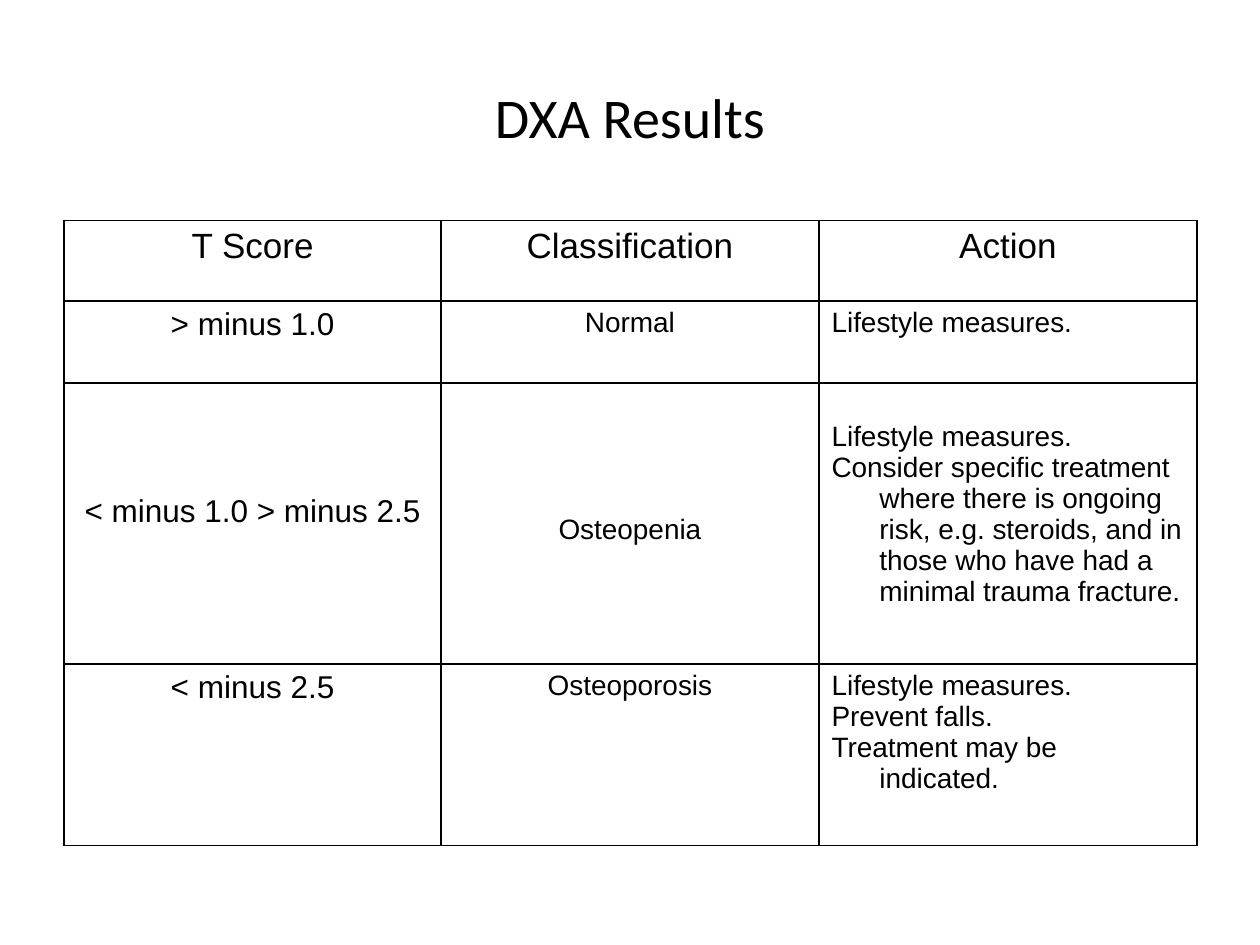
from lxml import etree
from pptx import Presentation
from pptx.dml.color import RGBColor
from pptx.enum.text import MSO_ANCHOR, PP_ALIGN as ALIGN
from pptx.oxml.ns import qn
from pptx.util import Inches, Pt

BLACK = RGBColor(0x00, 0x00, 0x00)
HANGING = 0.38
MARGIN = 0.05

COLUMNS = [2.99, 3, 3]
ROWS = [0.64, 0.65, 2.23, 1.44]
HEADER = ["T Score", "Classification", "Action"]
RESULTS = [
    ["> minus 1.0", "Normal", "Lifestyle measures."],
    ["< minus 1.0 > minus 2.5", "Osteopenia",
     "Lifestyle measures.\nConsider specific treatment where there is ongoing "
     "risk, e.g. steroids, and in those who have had a minimal trauma fracture."],
    ["< minus 2.5", "Osteoporosis",
     "Lifestyle measures.\nPrevent falls.\nTreatment may be indicated."],
]
# Size and alignment of each column below the header
BODY = [(18, ALIGN.CENTER), (16, ALIGN.CENTER), (16, ALIGN.LEFT)]
# Extra space above the text of the osteopenia row
OSTEOPENIA_ROW = 2
DROPS = [0.83, 0.99, 0.25]


def write(tf, text, size, font="Arial", color=BLACK, align=ALIGN.CENTER, hanging=0):
    """Fill a text frame, one paragraph for each line of text."""
    for i, line in enumerate(text.split("\n")):
        p = tf.paragraphs[0] if i == 0 else tf.add_paragraph()
        p.alignment = align
        if hanging:
            pPr = p._p.get_or_add_pPr()
            pPr.set("marL", str(Inches(hanging)))
            pPr.set("indent", str(-Inches(hanging)))
        r = p.add_run()
        r.text = line
        r.font.size = Pt(size)
        r.font.name = font
        r.font.color.rgb = color


class SlideBuilder:
    def __init__(self, prs, line_color=BLACK, line_width=1):
        self.s = prs.slides.add_slide(prs.slide_layouts[5])
        self.line_color = line_color
        self.line_width = line_width

    def title(self, text, x, y, w, h):
        sp = self.s.shapes.title
        sp.left, sp.top, sp.width, sp.height = map(Inches, (x, y, w, h))
        sp.text_frame.vertical_anchor = MSO_ANCHOR.MIDDLE
        write(sp.text_frame, text, 32, font="Calibri")

    def table(self, x, y, columns, rows):
        frame = self.s.shapes.add_table(
            len(rows), len(columns), Inches(x), Inches(y),
            Inches(sum(columns)), Inches(sum(rows)))
        table = frame.table
        table.first_row = table.horz_banding = False
        for column, width in zip(table.columns, columns):
            column.width = Inches(width)
        for row, height in zip(table.rows, rows):
            row.height = Inches(height)
        return table

    def cell(self, cell, text, size, align=ALIGN.CENTER, drop=0):
        cell.fill.background()
        cell.margin_top = Inches(MARGIN + drop)
        self.borders(cell)
        write(cell.text_frame, text, size, align=align, hanging=HANGING)

    def borders(self, cell):
        tcPr = cell._tc.get_or_add_tcPr()
        for i, side in enumerate(("a:lnL", "a:lnR", "a:lnT", "a:lnB")):
            ln = etree.Element(qn(side), w=str(Pt(self.line_width)))
            fill = etree.SubElement(ln, qn("a:solidFill"))
            etree.SubElement(fill, qn("a:srgbClr"), val=str(self.line_color))
            tcPr.insert(i, ln)


def main():
    prs = Presentation()
    prs.slide_width, prs.slide_height = Inches(10), Inches(7.5)
    slide = SlideBuilder(prs)

    # Title
    slide.title("DXA Results", 0.5, 0.3, 9, 1.25)

    # Table header
    table = slide.table(0.51, 1.75, COLUMNS, ROWS)
    for col, text in enumerate(HEADER):
        slide.cell(table.cell(0, col), text, 20)

    # Table body
    for row, texts in enumerate(RESULTS, start=1):
        for col, (text, (size, align)) in enumerate(zip(texts, BODY)):
            drop = DROPS[col] if row == OSTEOPENIA_ROW else 0
            slide.cell(table.cell(row, col), text, size, align, drop)

    prs.save("out.pptx")


if __name__ == "__main__":
    main()
